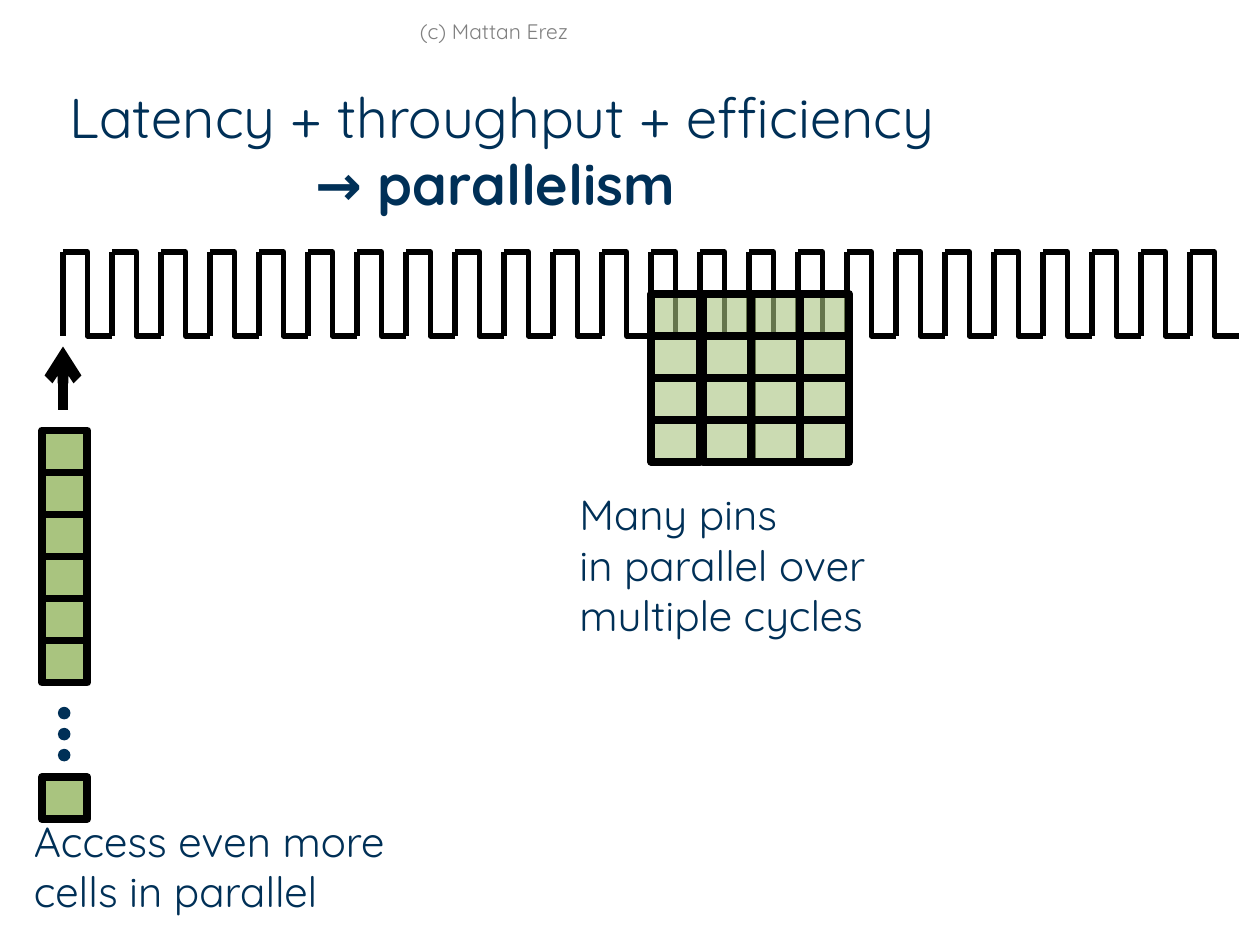
from pptx import Presentation
from pptx.dml.color import RGBColor
from pptx.enum.shapes import MSO_CONNECTOR, MSO_SHAPE
from pptx.enum.text import MSO_ANCHOR, PP_ALIGN
from pptx.oxml.ns import qn
from pptx.util import Inches, Pt
from lxml import etree

RECT, OVAL = MSO_SHAPE.RECTANGLE, MSO_SHAPE.OVAL
LINE, BENT = MSO_CONNECTOR.STRAIGHT, MSO_CONNECTOR.ELBOW
MID, TOP = MSO_ANCHOR.MIDDLE, MSO_ANCHOR.TOP
LEFT, MIDDLE = PP_ALIGN.LEFT, PP_ALIGN.CENTER
FONT = "Quicksand"
COLOR = {"ink": "003057", "cell": "A9C47F", "line": "000000", "gray": "808080"}
RGB = {name: RGBColor.from_string(code) for name, code in COLOR.items()}

deck = Presentation()
deck.slide_width, deck.slide_height = Inches(10), Inches(7.5)
slide = deck.slides.add_slide(deck.slide_layouts[5])
shapes = slide.shapes

# Grid: one clock cycle wide, one cell high
COL = Inches(7 / 18)
ROW = Inches(1 / 3)
EDGE = Inches(0.5)


def wire(kind, x1, y1, x2, y2, width):
    link = shapes.add_connector(kind, int(x1), int(y1), int(x2), int(y2))
    link.line.color.rgb = RGB["line"]
    link.line.width = Pt(width)
    etree.SubElement(link._element.spPr, qn("a:effectLst"))
    return link


def block(kind, x, y, wide, high, fill, alpha=None):
    part = shapes.add_shape(kind, int(x), int(y), int(wide), int(high))
    part.shadow.inherit = False
    part.fill.solid()
    part.fill.fore_color.rgb = RGB[fill]
    if kind == RECT:
        part.line.color.rgb = RGB["line"]
        part.line.width = Pt(4.5)
    else:
        part.line.fill.background()
    if alpha:
        tint = part._element.spPr.find(".//" + qn("a:srgbClr"))
        etree.SubElement(tint, qn("a:alpha")).set("val", str(alpha * 1000))


# Title, with the second line indented
title = shapes.title
title.left, title.top = EDGE, Inches(0.58)
title.width, title.height = Inches(9.33), Inches(1.25)
frame = title.text_frame
frame.word_wrap = True
frame.vertical_anchor = MID
frame.margin_left = frame.margin_right = frame.margin_top = frame.margin_bottom = 0
heads = [("Latency + throughput + efficiency", 0.05, False), ("→ parallelism", 2, True)]
for i, (words, indent, bold) in enumerate(heads):
    para = frame.paragraphs[0] if i == 0 else frame.add_paragraph()
    props = para._p.get_or_add_pPr()
    props.set("marL", str(Inches(indent)))
    props.set("indent", "0")
    para.alignment = LEFT
    para.line_spacing = 0.99
    para.space_before = Pt(0)
    run = para.add_run()
    run.text = words
    run.font.name, run.font.size, run.font.bold = FONT, Pt(32), bold
    run.font.color.rgb = RGB["ink"]

# Clock wave
for i in range(24):
    x = EDGE + i * COL
    wire(BENT, x, 6 * ROW, x + COL, 8 * ROW, 3)
    wire(LINE, x, 6 * ROW, x, 8 * ROW, 3)

# Arrow from the cells up to the wave
arrow = wire(LINE, EDGE, Inches(3.25), EDGE, Inches(2.75), 6)
etree.SubElement(arrow.line._get_or_add_ln(), qn("a:tailEnd")).set("type", "arrow")

# Stack of cells, with the last one set apart
for row in [10.25, 11.25, 12.25, 13.25, 14.25, 15.25, 18.5]:
    block(RECT, ROW, row * ROW, Inches(0.36), ROW, "cell")

# Dots between the stack and its last cell
for i in range(3):
    block(OVAL, Inches(0.46), Inches(5.61) + i * ROW / 2, Inches(0.1), Inches(0.1), "ink")

# Pins by cycles
for left in [5.17, 5.58, 5.96, 6.35]:
    for row in range(7, 11):
        block(RECT, Inches(left), row * ROW, COL, ROW, "cell", 60)

# Labels and copyright line
labels = [
    (0.17, 6.42, 3.25, 0.91, ["Access even more cells in parallel"], 24, "ink", LEFT, TOP),
    (4.5, 3.83, 2.67, 1.31, ["Many pins", "in parallel over", "multiple cycles"],
     24, "ink", LEFT, TOP),
    (0.92, 0, 6, 0.5, ["(c) Mattan Erez"], 12, "gray", MIDDLE, MID),
]
for x, y, wide, high, lines, size, color, align, anchor in labels:
    box = shapes.add_textbox(Inches(x), Inches(y), Inches(wide), Inches(high))
    frame = box.text_frame
    frame.word_wrap = True
    frame.vertical_anchor = anchor
    para = frame.paragraphs[0]
    para.alignment = align
    for i, words in enumerate(lines):
        if i:
            para.add_line_break()
        run = para.add_run()
        run.text = words
        run.font.name, run.font.size = FONT, Pt(size)
        run.font.color.rgb = RGB[color]

deck.save("out.pptx")
